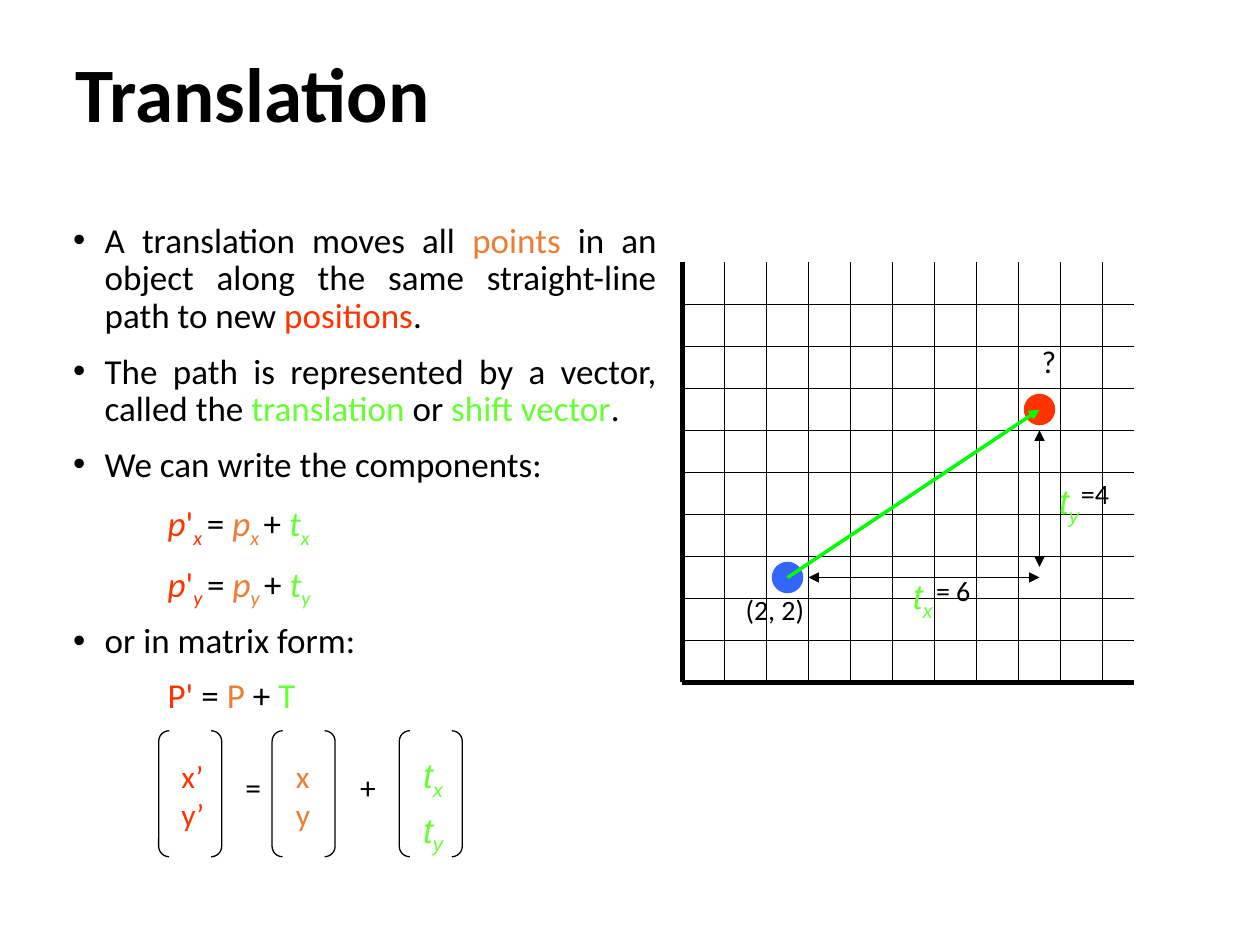
from lxml.etree import SubElement
from pptx import Presentation
from pptx.dml.color import RGBColor
from pptx.enum.shapes import MSO_CONNECTOR, MSO_SHAPE
from pptx.enum.text import MSO_ANCHOR, MSO_AUTO_SIZE, PP_ALIGN
from pptx.oxml.ns import qn
from pptx.util import Pt

INK = {"black": "000000", "orange": "ED7D31", "red": "FF3300",
       "lime": "66FF33", "green": "00FF00", "blue": "3366FF"}


# Content: a run is (text, colour, style); "i" is italic, "s" italic subscript
def sum_row(axis):
    return [("\t\tp", "red", "i"), ("'", "red", ""), (axis + " ", "red", "s"),
            ("= ", "black", ""), ("p", "orange", "i"),
            (axis + " ", "orange", "s"), ("+ ", "black", ""),
            ("t", "lime", "i"), (axis, "lime", "s")]


def shift(axis, lead=""):
    return [(lead + "t", "lime", "i"), (axis, "lime", "s")]


def plain(text, ink="black"):
    return [(text, ink, "")]


TITLE = "Translation"
BODY = [  # bulleted, runs
    (True, [("A translation moves all ", "black", ""), ("points", "orange", ""),
            (" in an object along the same straight-line path to new ", "black", ""),
            ("positions", "red", ""), (".", "black", "")]),
    (True, [("The path is represented by a vector, called the ", "black", ""),
            ("translation", "lime", ""), (" or ", "black", ""),
            ("shift vector", "lime", ""), (".", "black", "")]),
    (True, plain("We can write the components:")),
    (False, sum_row("x")),
    (False, sum_row("y")),
    (True, plain("or in matrix form:")),
    (False, [("\t\tP' ", "red", ""), ("= ", "black", ""), ("P ", "orange", ""),
             ("+ ", "black", ""), ("T", "lime", "")]),
]
LABELS = [  # left, top, width, height, font, size, paragraphs
    (509, 324.7, 33.8, 31, "Arial", 20, [shift("x", " ")]),
    (592.6, 270.7, 43.2, 31, "Arial", 20, [shift("y", " ")]),
    (96.5, 429, 34.6, 64.8, "Calibri", 18, [plain("x’", "red"), plain("y’", "red")]),
    (162, 429, 26.6, 64.8, "Calibri", 18, [plain("x", "orange"), plain("y", "orange")]),
    (234.7, 427, 31.7, 59.8, "Arial", 20, [shift("x"), shift("y")]),
    (419, 334.8, 49, 26.6, "Calibri", 16, [plain("(2, 2)")]),
    (527.8, 324, 35.3, 26.6, "Calibri", 16, [plain("= 6")]),
    (610.6, 268.6, 31.7, 26.6, "Calibri", 16, [plain("=4")]),
    (588.2, 192.2, 24, 36, "Calibri", 18, [plain("?")]),
]
SIGNS = (133.2, 435.6, 102, 28.8, "Calibri", 18, [plain("=\t+")])
BRACKETS = [90.7, 155.5, 228.2]

# Grid: origin at lower left, cells of equal size
LEFT, BASE, RIGHT, TOP, CELL = 390, 390, 648, 150, 24
START, GOAL = (2.5, 2.5), (8.5, 6.5)

deck = Presentation()
deck.slide_width, deck.slide_height = Pt(720), Pt(540)
slide = deck.slides.add_slide(deck.slide_layouts[1])
shapes = slide.shapes


def tint(ink):
    return RGBColor.from_string(INK[ink])


def place(shape, x, y, w, h):
    shape.left, shape.top, shape.width, shape.height = Pt(x), Pt(y), Pt(w), Pt(h)


def write(para, runs, font, size):
    for text, ink, style in runs:
        run = para.add_run()
        run.text = text
        run.font.name, run.font.size = font, Pt(size)
        run.font.color.rgb = tint(ink)
        run.font.italic = style != ""
        if style == "s":
            run.font._element.set("baseline", "-25000")


def label(x, y, w, h, font, size, paras, wrap=False):
    box = shapes.add_textbox(Pt(x), Pt(y), Pt(w), Pt(h))
    frame = box.text_frame
    frame.word_wrap = wrap
    frame.auto_size = MSO_AUTO_SIZE.SHAPE_TO_FIT_TEXT
    for n, runs in enumerate(paras):
        para = frame.add_paragraph() if n else frame.paragraphs[0]
        if n and font == "Arial":
            para.space_before = Pt(4)
        write(para, runs, font, size)
    return box


def line(x1, y1, x2, y2, width=0.75, ink="black", ends=()):
    link = shapes.add_connector(MSO_CONNECTOR.STRAIGHT, Pt(x1), Pt(y1), Pt(x2), Pt(y2))
    link.line.width = Pt(width)
    link.line.color.rgb = tint(ink)
    for end in ends:
        SubElement(link.line._get_or_add_ln(), qn("a:" + end), type="triangle")
    SubElement(link._element.spPr, qn("a:effectLst"))


def spot(point):
    return LEFT + CELL * point[0], BASE - CELL * point[1]


# Title
title = shapes.title
place(title, 36, 10.8, 612, 90)
title.text_frame.text = TITLE
title.text_frame.vertical_anchor = MSO_ANCHOR.MIDDLE
head = title.text_frame.paragraphs[0]
head.alignment, head.line_spacing = PP_ALIGN.LEFT, 0.9
font = head.runs[0].font
font.name, font.size, font.bold = "Calibri", Pt(44), True
font.color.rgb = tint("black")

# Body list
body = slide.placeholders[1]
place(body, 34.6, 123.8, 347.8, 390.2)
frame = body.text_frame
frame.auto_size = MSO_AUTO_SIZE.NONE
for n, (dot, runs) in enumerate(BODY):
    para = frame.add_paragraph() if n else frame.paragraphs[0]
    para.alignment, para.line_spacing = PP_ALIGN.JUSTIFY, 0.9
    para.space_before = Pt(10)
    props = para._p.get_or_add_pPr()
    props.set("marL", str(Pt(18)))
    props.set("indent", str(Pt(-18)))
    if dot:
        SubElement(props, qn("a:buFont"), typeface="Arial")
        SubElement(props, qn("a:buChar"), char="•")
    else:
        SubElement(props, qn("a:buNone"))
    write(para, runs, "Calibri", 20)

# Axes and grid
line(LEFT, TOP, LEFT, BASE, 3)
line(LEFT, BASE, RIGHT, BASE, 3)
for x in range(LEFT + CELL, RIGHT, CELL):
    line(x, TOP, x, BASE)
for y in range(BASE - CELL, TOP, -CELL):
    line(LEFT, y, RIGHT, y)

# Points
for point, ink in ((START, "blue"), (GOAL, "red")):
    x, y = spot(point)
    dot = shapes.add_shape(MSO_SHAPE.OVAL, Pt(x - 9), Pt(y - 9), Pt(18), Pt(18))
    dot.shadow.inherit = False
    dot.fill.solid()
    dot.fill.fore_color.rgb = tint(ink)
    dot.line.fill.background()

# Shift vector and its two components
(x1, y1), (x2, y2) = spot(START), spot(GOAL)
both = ("headEnd", "tailEnd")
line(x1, y1, x2, y2, 2, "green", ("tailEnd",))
line(x1 + 12, y1, x2, y1, ends=both)
line(x2, y1 - 6, x2, y2 + 12, ends=both)

# Matrix brackets
for x in BRACKETS:
    pair = shapes.add_shape(MSO_SHAPE.DOUBLE_BRACKET, Pt(x), Pt(417.6), Pt(36), Pt(72))
    pair.shadow.inherit = False
    pair.fill.background()
    pair.line.color.rgb = tint("black")
    pair.line.width = Pt(0.75)

# Labels, then the matrix signs set apart by a tab stop
for item in LABELS:
    label(*item)
signs = label(*SIGNS, wrap=True)
props = signs.text_frame.paragraphs[0]._p.get_or_add_pPr()
SubElement(SubElement(props, qn("a:tabLst")), qn("a:tab"), pos=str(Pt(65.5)), algn="l")

deck.save("out.pptx")
